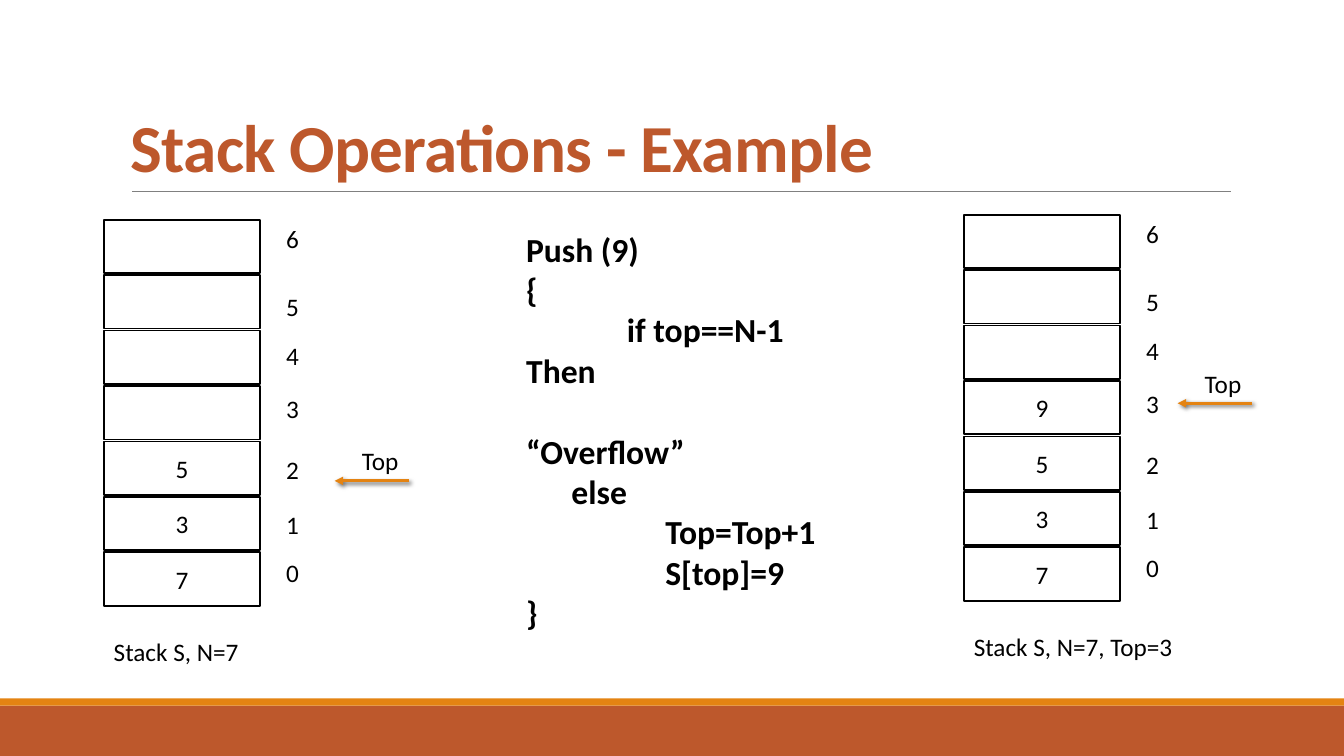
from lxml.etree import SubElement
from pptx import Presentation
from pptx.dml.color import RGBColor
from pptx.enum.shapes import MSO_CONNECTOR as LINE, MSO_SHAPE as SHAPE
from pptx.enum.text import MSO_ANCHOR as ANCHOR, PP_ALIGN as ALIGN
from pptx.oxml import parse_xml
from pptx.oxml.ns import nsdecls, qn
from pptx.util import Inches, Pt

TITLE = "Stack Operations - Example"
CODE = [  # text, left indent, first-line indent, space before
    ("Push (9)", 0, 0, 0),
    ("{", 0, 0, 0),
    ("if top==N-1 Then", 0, 1, 0),
    ("“Overflow”", 0, 0, 29),
    ("else", 0.45, 0, 0),
    ("Top=Top+1", 1.38, 0, 0),
    ("S[top]=9", 1.38, 0, 0),
    ("}", 0, 0, 0),
]
STACKS = [
    dict(left=1.03, top=2.18, cells=["", "", "", "", "5", "3", "7"],
         caption="Stack S, N=7", arrow=(2.29, 4.71)),
    dict(left=9.56, top=2.13, cells=["", "", "", "9", "5", "3", "7"],
         caption="Stack S, N=7, Top=3", arrow=(2.12, 3.4)),
]
INDEX_ROWS = [-0.02, 1.2, 2.09, 3.05, 4.15, 5.13, 6]
CAPTION_ROW = 7.43
ROW, CELL_W, CELL_H = 0.55, 1.55, 0.53
INDEX_X, ARROW_W, LABEL_H = 1.71, 0.74, 0.4

W, H = 13.33, 7.5
FONT = "Calibri"
BLACK = RGBColor(0x00, 0x00, 0x00)
WHITE = RGBColor(0xFF, 0xFF, 0xFF)
RUST = RGBColor(0xBD, 0x58, 0x2C)
ORANGE = RGBColor(0xE4, 0x83, 0x12)
GRAY = RGBColor(0x80, 0x80, 0x80)
SHADOW = (
    f'<a:effectLst {nsdecls("a")}><a:outerShdw blurRad="38100" dist="25400" '
    'dir="2700000" rotWithShape="0"><a:srgbClr val="000000">'
    '<a:alpha val="60000"/></a:srgbClr></a:outerShdw></a:effectLst>'
)


def write(p, text, size=18, color=BLACK, bold=False, align=ALIGN.LEFT):
    """Fill a paragraph with one formatted run and return the run."""
    p.alignment = align
    r = p.add_run()
    r.text = text
    r.font.name, r.font.size, r.font.bold = FONT, Pt(size), bold
    r.font.color.rgb = color
    return r


def add_text(shapes, x, y, w, h, anchor=ANCHOR.TOP):
    """Add an empty wrapping text box and return its frame."""
    tf = shapes.add_textbox(*map(Inches, (x, y, w, h))).text_frame
    tf.word_wrap = True
    tf.vertical_anchor = anchor
    return tf


def add_rect(shapes, x, y, w, h, fill, line=None):
    """Add a flat rectangle."""
    sp = shapes.add_shape(SHAPE.RECTANGLE, *map(Inches, (x, y, w, h)))
    sp.shadow.inherit = False
    sp.fill.solid()
    sp.fill.fore_color.rgb = fill
    if line is None:
        sp.line.fill.background()
    else:
        sp.line.color.rgb, sp.line.width = line, Pt(1.25)
    return sp


def add_line(shapes, x1, y1, x2, y2, color, width, arrow=False):
    """Add a straight line, or a shadowed arrow."""
    c = shapes.add_connector(LINE.STRAIGHT, *map(Inches, (x1, y1, x2, y2)))
    c.line.color.rgb, c.line.width = color, Pt(width)
    props = c._element.spPr
    if arrow:
        SubElement(c.line._get_or_add_ln(), qn("a:tailEnd"), type="triangle")
        props.append(parse_xml(SHADOW))
    else:
        SubElement(props, qn("a:effectLst"))


def add_stack(shapes, left, top, cells, caption, arrow):
    """Add a grouped stack with its indexes, caption and top pointer."""
    group = shapes.add_group_shape().shapes
    last = len(cells) - 1
    for i, (value, index_row) in enumerate(zip(cells, INDEX_ROWS)):
        sp = add_rect(group, left, top + i * ROW, CELL_W, CELL_H, WHITE, BLACK)
        if value:
            sp.text_frame.vertical_anchor = ANCHOR.MIDDLE
            write(sp.text_frame.paragraphs[0], value, align=ALIGN.CENTER)
        tf = add_text(group, left + INDEX_X, top + index_row * ROW, 0.34, LABEL_H)
        write(tf.paragraphs[0], str(last - i))
    tf = add_text(group, left, top + CAPTION_ROW * ROW, 2.47, LABEL_H)
    write(tf.paragraphs[0], caption)
    tip_x, tip_y = left + arrow[0], top + arrow[1] * ROW
    add_line(group, tip_x + ARROW_W, tip_y, tip_x, tip_y, ORANGE, 2, arrow=True)
    tf = add_text(group, tip_x + 0.17, tip_y - LABEL_H, 0.65, LABEL_H)
    write(tf.paragraphs[0], "Top")


def main():
    """Build and save the slide."""
    prs = Presentation()
    prs.slide_width, prs.slide_height = Inches(W), Inches(H)
    s = prs.slides.add_slide(prs.slide_layouts[6]).shapes

    add_rect(s, 0, 7, W, 0.5, RUST)
    add_rect(s, 0, 6.93, W, 0.07, ORANGE)
    add_line(s, 1.31, 1.9, 12.21, 1.9, GRAY, 0.5)

    p = add_text(s, 1.2, 0.31, 11, 1.59, ANCHOR.BOTTOM).paragraphs[0]
    p.line_spacing = 0.85
    r = write(p, TITLE, size=48, color=RUST, bold=True)
    r.font._element.set("spc", "-50")

    tf = add_text(s, 5.12, 2.22, 3.36, 3.33)
    for i, (text, margin, first, before) in enumerate(CODE):
        p = tf.add_paragraph() if i else tf.paragraphs[0]
        p.space_before = Pt(before)
        props = p._p.get_or_add_pPr()
        props.set("marL", str(Inches(margin)))
        props.set("indent", str(Inches(first)))
        write(p, text, size=24, bold=True)

    for stack in STACKS:
        add_stack(s, **stack)
    prs.save("out.pptx")


if __name__ == "__main__":
    main()
